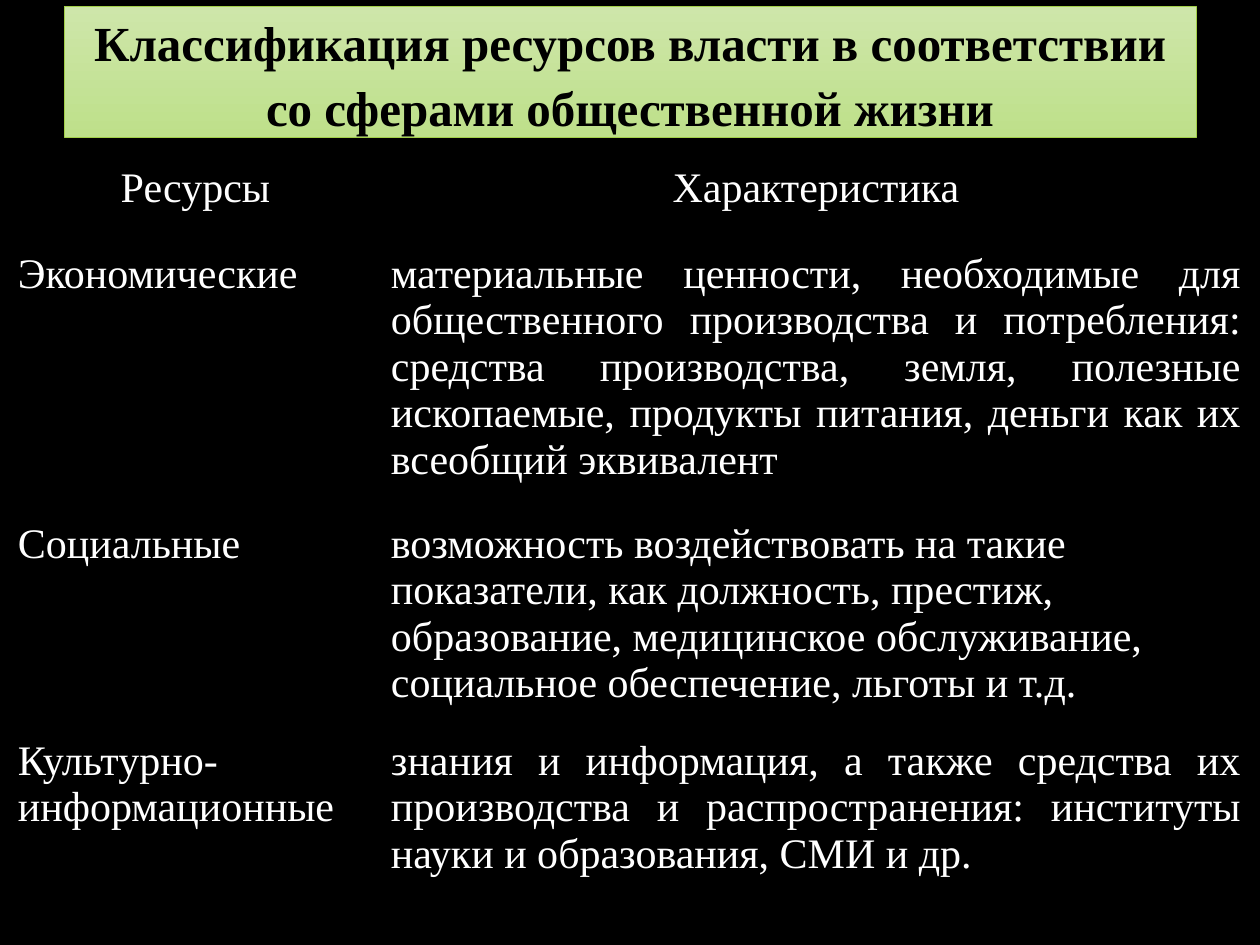
from dataclasses import dataclass

import pptx
import pptx.dml.color
import pptx.enum.text
import pptx.oxml
import pptx.oxml.ns
import pptx.util

ALIGN = pptx.enum.text.PP_ALIGN
ANCHOR = pptx.enum.text.MSO_ANCHOR
EMU_PER_PX = 914400 / 126


@dataclass(frozen=True)
class Theme:
    font: str = "Times New Roman"
    title_size: int = 28
    body_size: int = 24
    background: str = "000000"
    text: str = "FFFFFF"
    title_text: str = "000000"
    title_top: str = "CEE6AA"
    title_bottom: str = "BEE08A"
    title_line: str = "A2CF49"
    border: str = "000000"


THEME = Theme()

TITLE = "Классификация ресурсов власти в соответствии со сферами общественной жизни"
COLUMN_WIDTHS = (373, 868)
ROW_HEIGHTS = (86, 270, 217, 161)
# Each row: (resource, alignment), (description, alignment)
ROWS = (
    (("Ресурсы", ALIGN.CENTER), ("Характеристика", ALIGN.CENTER)),
    (("Экономические", ALIGN.JUSTIFY),
     ("материальные ценности, необходимые для общественного производства и "
      "потребления: средства производства, земля, полезные ископаемые, "
      "продукты питания, деньги как их всеобщий эквивалент", ALIGN.JUSTIFY)),
    (("Социальные", ALIGN.JUSTIFY),
     ("возможность воздействовать на такие показатели, как должность, престиж, "
      "образование, медицинское обслуживание, социальное обеспечение, "
      "льготы и т.д.", ALIGN.LEFT)),
    (("Культурно-информационные", ALIGN.JUSTIFY),
     ("знания и информация, а также средства их производства и распространения: "
      "институты науки и образования, СМИ и др.", ALIGN.JUSTIFY)),
)


def px(n):
    return pptx.util.Emu(round(n * EMU_PER_PX))


def rgb(value):
    return pptx.dml.color.RGBColor.from_string(value)


def add_text(p, text, size, color, align, bold=False):
    p.alignment = align
    r = p.add_run()
    r.text = text
    r.font.name = THEME.font
    r.font.size = pptx.util.Pt(size)
    r.font.bold = bold
    r.font.color.rgb = rgb(color)


def set_borders(cell, color, width):
    tc_pr = cell._tc.get_or_add_tcPr()
    for i, side in enumerate(("lnL", "lnR", "lnT", "lnB")):
        line = pptx.oxml.parse_xml(
            f'<a:{side} {pptx.oxml.ns.nsdecls("a")} w="{pptx.util.Pt(width)}">'
            f'<a:solidFill><a:srgbClr val="{color}"/></a:solidFill></a:{side}>')
        tc_pr.insert(i, line)


def place_title(s, x, y, w, h):
    sp = s.shapes.title
    sp.left, sp.top, sp.width, sp.height = px(x), px(y), px(w), px(h)

    # Vertical green gradient with a thin outline
    sp.fill.gradient()
    sp.fill.gradient_angle = 270
    for stop, color in zip(sp.fill.gradient_stops,
                           (THEME.title_top, THEME.title_bottom)):
        stop.color.rgb = rgb(color)
    for stop, position in zip(sp.fill.gradient_stops, (0, 1)):
        stop.position = position
    sp.line.color.rgb = rgb(THEME.title_line)
    sp.line.width = pptx.util.Pt(0.5)

    tf = sp.text_frame
    tf.word_wrap = True
    tf.auto_size = pptx.enum.text.MSO_AUTO_SIZE.NONE
    tf.vertical_anchor = ANCHOR.MIDDLE
    p = tf.paragraphs[0]
    p.line_spacing = 1.1
    add_text(p, TITLE, THEME.title_size, THEME.title_text, ALIGN.CENTER, bold=True)


def place_table(s, x, y):
    frame = s.shapes.add_table(len(ROW_HEIGHTS), len(COLUMN_WIDTHS), px(x), px(y),
                               px(sum(COLUMN_WIDTHS)), px(sum(ROW_HEIGHTS)))
    table = frame.table
    table.first_row = table.horz_banding = False
    for column, width in zip(table.columns, COLUMN_WIDTHS):
        column.width = px(width)
    for row, height, contents in zip(table.rows, ROW_HEIGHTS, ROWS):
        row.height = px(height)
        for cell, (text, align) in zip(row.cells, contents):
            cell.margin_left = cell.margin_right = px(9)
            cell.margin_top = cell.margin_bottom = 0
            cell.vertical_anchor = ANCHOR.TOP
            cell.fill.background()
            set_borders(cell, THEME.border, 1)
            add_text(cell.text_frame.paragraphs[0], text,
                     THEME.body_size, THEME.text, align)


def main():
    prs = pptx.Presentation()
    prs.slide_width, prs.slide_height = px(1260), px(945)
    s = prs.slides.add_slide(prs.slide_layouts.get_by_name("Title Only"))
    s.background.fill.solid()
    s.background.fill.fore_color.rgb = rgb(THEME.background)

    place_title(s, 64, 6, 1132, 131)
    place_table(s, 9, 165)
    prs.save("out.pptx")


if __name__ == "__main__":
    main()
